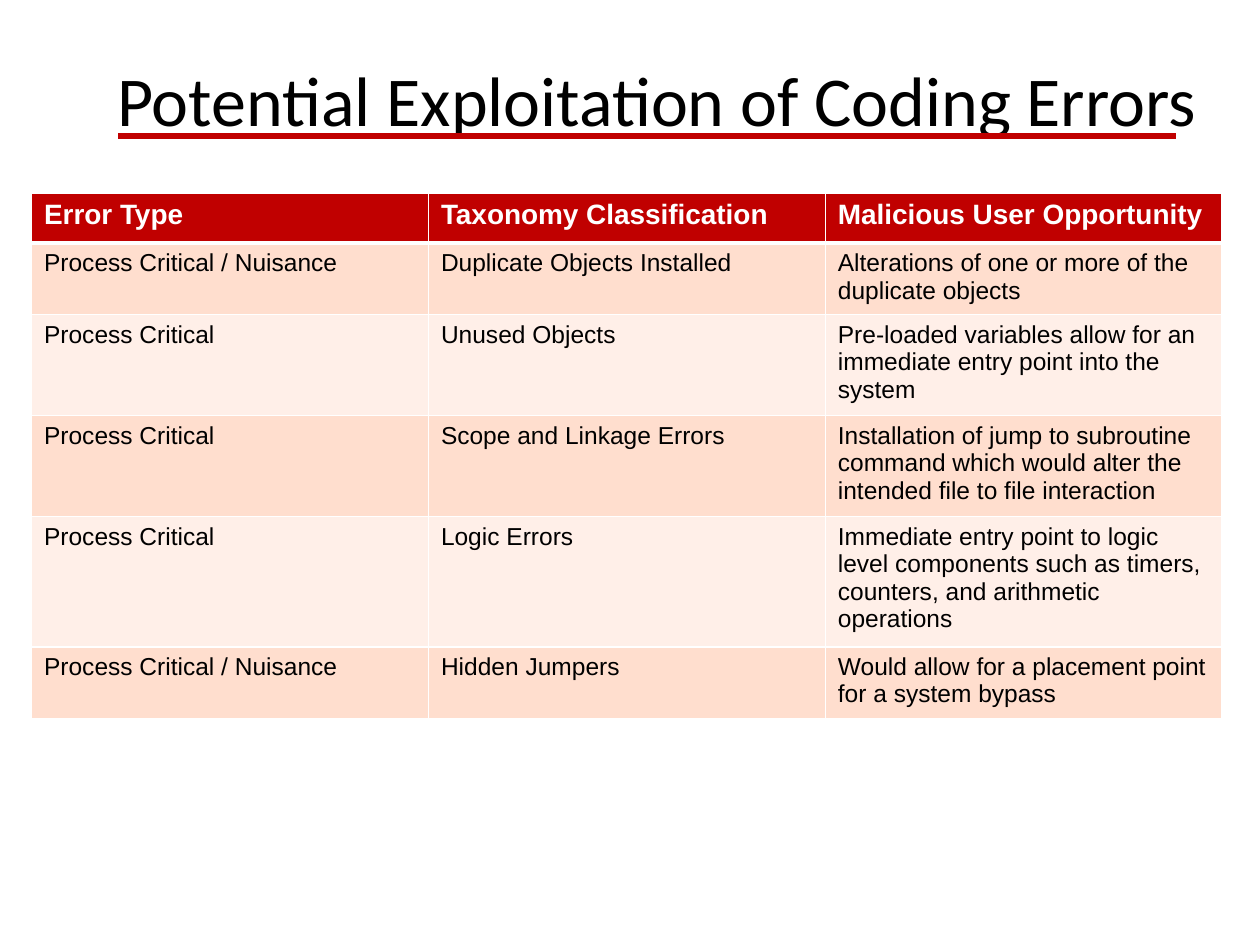
from lxml import etree
from pptx import Presentation
from pptx.dml.color import RGBColor
from pptx.enum import shapes, text
from pptx.oxml import ns
from pptx.util import Inches, Pt

TITLE = "Potential Exploitation of Coding Errors"
HEADERS = ("Error Type", "Taxonomy Classification", "Malicious User Opportunity")
ERRORS = [
    ("Process Critical / Nuisance", "Duplicate Objects Installed",
     "Alterations of one or more of the duplicate objects"),
    ("Process Critical", "Unused Objects",
     "Pre-loaded variables allow for an immediate entry point into the system"),
    ("Process Critical", "Scope and Linkage Errors",
     "Installation of jump to subroutine command which would alter the intended file to file interaction"),
    ("Process Critical", "Logic Errors",
     "Immediate entry point to logic level components such as timers, counters, and arithmetic operations"),
    ("Process Critical / Nuisance", "Hidden Jumpers",
     "Would allow for a placement point for a system bypass"),
]
ROW_HEIGHTS = (0.4, 0.56, 0.8, 0.8, 1.03, 0.56)
COLUMN_WIDTH = 3.15
COLORS = {"red": "C00000", "peach": "FFDECE", "blush": "FFEFE8",
          "white": "FFFFFF", "black": "000000"}


def color(name):
    return RGBColor.from_string(COLORS[name])


def style_font(font, family, size, ink, bold=False):
    font.name, font.size, font.bold = family, Pt(size), bold
    font.color.rgb = color(ink)


def add_borders(cell, widths):
    properties = cell._tc.get_or_add_tcPr()
    for side, width in zip("LRTB", widths):
        border = etree.SubElement(properties, ns.qn(f"a:ln{side}"), w=str(Pt(width)))
        fill = etree.SubElement(border, ns.qn("a:solidFill"))
        etree.SubElement(fill, ns.qn("a:srgbClr"), val=COLORS["white"])


def add_title(slide):
    title = slide.shapes.title
    title.left, title.top = Inches(0.83), Inches(0.58)
    title.width, title.height = Inches(8.86), Inches(0.57)
    frame = title.text_frame
    frame.text = TITLE
    frame.word_wrap = False
    frame.auto_size = text.MSO_AUTO_SIZE.SHAPE_TO_FIT_TEXT
    frame.vertical_anchor = text.MSO_ANCHOR.TOP
    heading = frame.paragraphs[0]
    heading.alignment = text.PP_ALIGN.LEFT
    heading.line_spacing = 0.7
    heading.space_before = Pt(0)
    style_font(heading.runs[0].font, "Calibri", 40, "black")


def add_underline(slide):
    underline = slide.shapes.add_connector(
        shapes.MSO_CONNECTOR.STRAIGHT, Inches(0.94), Inches(1.08), Inches(9.33), Inches(1.08))
    underline.line.color.rgb = color("red")
    underline.line.width = Pt(3)
    etree.SubElement(underline._element.spPr, ns.qn("a:effectLst"))


def add_error_table(slide):
    rows = [HEADERS, *ERRORS]
    table = slide.shapes.add_table(
        len(rows), len(HEADERS), Inches(0.25), Inches(1.53),
        Inches(COLUMN_WIDTH * len(HEADERS)), Inches(sum(ROW_HEIGHTS))).table
    for column in table.columns:
        column.width = Inches(COLUMN_WIDTH)
    for r, (entries, height) in enumerate(zip(rows, ROW_HEIGHTS)):
        table.rows[r].height = Inches(height)
        header = r == 0
        band = "red" if header else ("blush", "peach")[r % 2]
        for c, entry in enumerate(entries):
            cell = table.cell(r, c)
            cell.text = entry
            add_borders(cell, (1, 1, 3 if r == 1 else 1, 3 if header else 1))
            cell.fill.solid()
            cell.fill.fore_color.rgb = color(band)
            style_font(cell.text_frame.paragraphs[0].runs[0].font, "Arial",
                       16 if header else 14, "white" if header else "black", header)


def main():
    deck = Presentation()
    deck.slide_width, deck.slide_height = Inches(10), Inches(7.5)
    slide = deck.slides.add_slide(deck.slide_layouts[5])
    add_title(slide)
    add_underline(slide)
    add_error_table(slide)
    deck.save("out.pptx")


if __name__ == "__main__":
    main()
